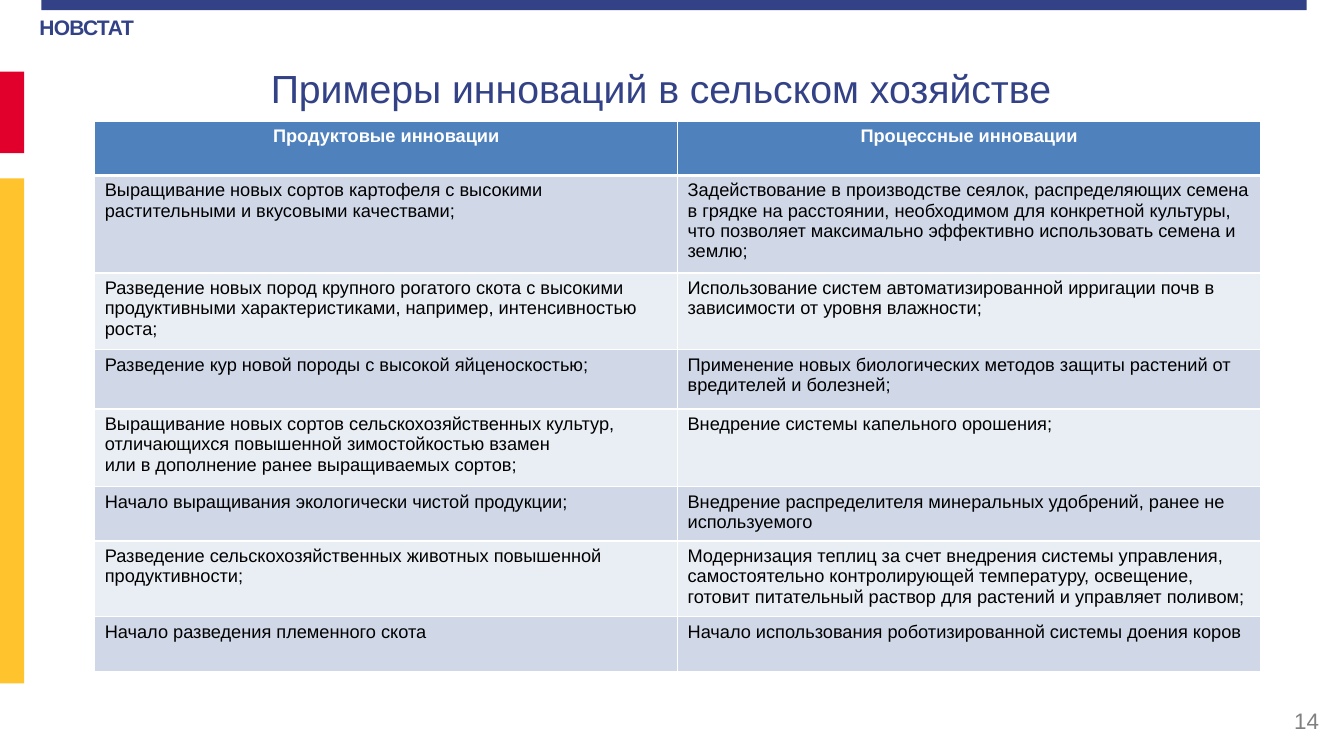
from dataclasses import dataclass

from lxml import etree
from pptx import Presentation
from pptx.dml.color import RGBColor
from pptx.enum import shapes, text
from pptx.oxml import ns
from pptx.util import Inches, Pt

NAVY, RED, YELLOW, GRAY = "334286", "E1002B", "FFC32E", "808080"
WHITE, BLACK, HEADER_BLUE = "FFFFFF", "000000", "4F81BD"
BANDS = ("D0D8E8", "E9EDF4")


@dataclass
class Bar:
    left: float
    top: float
    width: float
    height: float
    fill: str


@dataclass
class Row:
    height: float
    product: str
    process: str


BARS = [
    Bar(0.41, 0, 12.55, 0.1, NAVY),
    Bar(0, 0.71, 0.24, 0.81, RED),
    Bar(0, 1.77, 0.24, 5.01, YELLOW),
]

ROWS = [
    Row(0.54, "Продуктовые инновации", "Процессные инновации"),
    Row(0.69, "Выращивание новых сортов картофеля с высокими растительными и вкусовыми качествами;",
        "Задействование в производстве сеялок, распределяющих семена в грядке на расстоянии, "
        "необходимом для конкретной культуры, что позволяет максимально эффективно "
        "использовать семена и землю;"),
    Row(0.76, "Разведение новых пород крупного рогатого скота с высокими продуктивными "
        "характеристиками, например, интенсивностью роста;",
        "Использование систем автоматизированной ирригации почв в зависимости от уровня влажности;"),
    Row(0.59, "Разведение кур новой породы с высокой яйценоскостью;",
        "Применение новых биологических методов защиты растений от вредителей и болезней;"),
    Row(0.77, "Выращивание новых сортов сельскохозяйственных культур, отличающихся повышенной "
        "зимостойкостью взамен \nили в дополнение ранее выращиваемых сортов;",
        "Внедрение системы капельного орошения;"),
    Row(0.54, "Начало выращивания экологически чистой продукции;",
        "Внедрение распределителя минеральных удобрений, ранее не используемого"),
    Row(0.69, "Разведение сельскохозяйственных животных повышенной продуктивности;",
        "Модернизация теплиц за счет внедрения системы управления, самостоятельно "
        "контролирующей температуру, освещение, готовит питательный раствор для растений "
        "и управляет поливом;"),
    Row(0.54, "Начало разведения племенного скота",
        "Начало использования роботизированной системы доения коров"),
]


def color(value: str) -> RGBColor:
    return RGBColor.from_string(value)


def write(frame, wording: str, size: float, ink: str, bold: bool = False,
          align=text.PP_ALIGN.LEFT):
    """Fill a text frame with one formatted paragraph and return it."""
    frame.word_wrap = True
    para = frame.paragraphs[0]
    para.text = wording
    para.alignment = align
    for span in para.runs:
        span.font.name = "Arial"
        span.font.size = Pt(size)
        span.font.bold = bold
        span.font.color.rgb = color(ink)
    return para


def place(shape, left: float, top: float, width: float, height: float) -> None:
    shape.left, shape.top = Inches(left), Inches(top)
    shape.width, shape.height = Inches(width), Inches(height)


def draw_bar(page, bar: Bar) -> None:
    box = page.shapes.add_shape(
        shapes.MSO_SHAPE.RECTANGLE, Inches(bar.left), Inches(bar.top),
        Inches(bar.width), Inches(bar.height))
    box.shadow.inherit = False
    box.fill.solid()
    box.fill.fore_color.rgb = color(bar.fill)
    box.line.fill.background()


def set_borders(cell, bottom: float, top: float) -> None:
    properties = cell._tc.get_or_add_tcPr()
    widths = {"a:lnL": 1, "a:lnR": 1, "a:lnT": top, "a:lnB": bottom}
    for index, (tag, width) in enumerate(widths.items()):
        line = etree.Element(ns.qn(tag), w=str(Pt(width)))
        fill = etree.SubElement(line, ns.qn("a:solidFill"))
        etree.SubElement(fill, ns.qn("a:srgbClr"), val=WHITE)
        properties.insert(index, line)


def draw_table(page) -> None:
    height = sum(row.height for row in ROWS)
    table = page.shapes.add_table(
        len(ROWS), 2, Inches(0.94), Inches(1.2), Inches(11.56), Inches(height)).table
    for index, row in enumerate(ROWS):
        header = index == 0
        table.rows[index].height = Inches(row.height)
        for column, wording in enumerate((row.product, row.process)):
            cell = table.cell(index, column)
            cell.fill.solid()
            cell.fill.fore_color.rgb = color(HEADER_BLUE if header else BANDS[(index - 1) % 2])
            write(cell.text_frame, wording, 13, WHITE if header else BLACK, header,
                  text.PP_ALIGN.CENTER if header else text.PP_ALIGN.LEFT)
            set_borders(cell, bottom=3 if header else 1, top=3 if index == 1 else 1)


def add_text_box(page, left: float, top: float, width: float, height: float):
    return page.shapes.add_textbox(
        Inches(left), Inches(top), Inches(width), Inches(height)).text_frame


def main() -> None:
    deck = Presentation()
    deck.slide_width, deck.slide_height = Inches(13.33), Inches(7.5)
    page = deck.slides.add_slide(deck.slide_layouts[5])

    # Colour bars and agency name
    for bar in BARS:
        draw_bar(page, bar)
    agency = add_text_box(page, 0.39, 0.13, 1.15, 0.32)
    agency.margin_left = agency.margin_right = agency.margin_bottom = 0
    agency.margin_top = Inches(0.01)
    para = write(agency, "НОВСТАТ", 15, NAVY, bold=True)
    para.space_before = Pt(1)
    para.runs[0].font._element.set("spc", "-50")

    # Title
    title = page.shapes.title
    place(title, 0.32, 0.59, 12.47, 1.02)
    title.text_frame.vertical_anchor = text.MSO_ANCHOR.TOP
    title.text_frame.auto_size = text.MSO_AUTO_SIZE.NONE
    para = write(title.text_frame, "Примеры инноваций в сельском хозяйстве", 28, NAVY,
                 align=text.PP_ALIGN.CENTER)
    para.space_before = Pt(3)

    # Innovations table
    draw_table(page)

    # Page number
    number = add_text_box(page, 10.18, 6.95, 3, 0.4)
    number.vertical_anchor = text.MSO_ANCHOR.MIDDLE
    write(number, "14", 16, GRAY, align=text.PP_ALIGN.RIGHT)

    deck.save("out.pptx")


if __name__ == "__main__":
    main()
